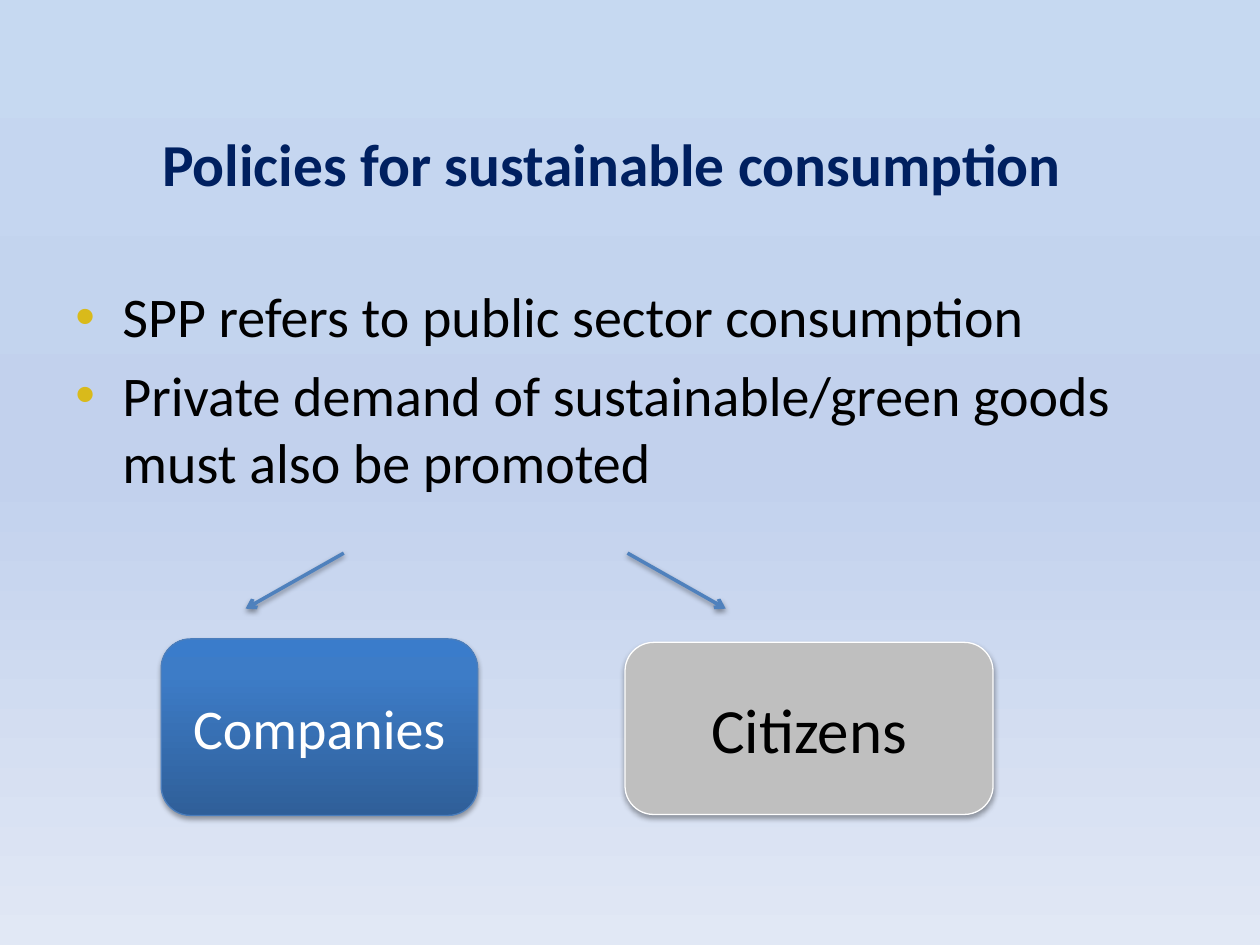
from lxml import etree
from pptx import Presentation
from pptx.dml.color import RGBColor
from pptx.enum.shapes import MSO_CONNECTOR, MSO_SHAPE
from pptx.enum.text import MSO_ANCHOR, PP_ALIGN
from pptx.oxml.ns import qn
from pptx.util import Cm, Pt

ROUNDED = MSO_SHAPE.ROUNDED_RECTANGLE
STRAIGHT = MSO_CONNECTOR.STRAIGHT
CENTER, LEFT = PP_ALIGN.CENTER, PP_ALIGN.LEFT
MIDDLE, TOP = MSO_ANCHOR.MIDDLE, MSO_ANCHOR.TOP

FONT = "Calibri"
COLORS = {
    "title": "002060", "text": "000000", "white": "FFFFFF",
    "bullet": "D9BA1B", "arrow": "4F81BD",
    "companies_line": "4B7EBC", "citizens": "BFBFBF", "shadow": "000000",
}
BACKGROUND_STOPS = [(0, "C6D9F1"), (50, "C2D1ED"), (100, "E1E8F5")]
COMPANIES_STOPS = [(0, "2F5F99"), (80, "3D7CC7"), (100, "3A7CCB")]
BULLETS = [
    "SPP refers to public sector consumption",
    "Private demand of sustainable/green goods must also be promoted",
]


def rgb(name):
    return RGBColor.from_string(COLORS[name])


def add_element(parent, tag, **attributes):
    return etree.SubElement(parent, qn(tag), attributes)


def set_gradient(fill, element, stops, angle):
    """Fill with any number of stops; the angle runs counter-clockwise."""
    fill.gradient()
    fill.gradient_angle = angle
    stop_list = next(element.iter(qn("a:gsLst")))
    for stop in list(stop_list):
        stop_list.remove(stop)
    for position, color in stops:
        stop = add_element(stop_list, "a:gs", pos=str(position * 1000))
        add_element(stop, "a:srgbClr", val=color)


def add_shadow(shape, distance, opacity):
    effects = add_element(shape.element.spPr, "a:effectLst")
    shadow = add_element(effects, "a:outerShdw", blurRad=str(Pt(3.1)),
                         dist=str(Pt(distance)), dir="5400000", rotWithShape="0")
    color = add_element(shadow, "a:srgbClr", val=COLORS["shadow"])
    add_element(color, "a:alpha", val=str(opacity * 1000))


def add_bullet(paragraph, first):
    properties = paragraph._p.get_or_add_pPr()
    properties.set("marL", str(Cm(0.95)))
    properties.set("indent", str(-Cm(0.95)))
    if not first:
        space = add_element(properties, "a:spcBef")
        add_element(space, "a:spcPct", val="20000")
    color = add_element(properties, "a:buClr")
    add_element(color, "a:srgbClr", val=COLORS["bullet"])
    add_element(properties, "a:buFont", typeface="Arial")
    add_element(properties, "a:buChar", char="•")


def write_text(shape, lines, size, color, bold=False, align=CENTER,
               anchor=MIDDLE, bulleted=False):
    frame = shape.text_frame
    frame.word_wrap = True
    frame.vertical_anchor = anchor
    for index, line in enumerate(lines):
        paragraph = frame.add_paragraph() if index else frame.paragraphs[0]
        paragraph.alignment = align
        if bulleted:
            add_bullet(paragraph, first=index == 0)
        run = paragraph.add_run()
        run.text = line
        run.font.name = FONT
        run.font.size = Pt(size)
        run.font.bold = bold
        run.font.color.rgb = rgb(color)


def add_text(slide, lines, left, top, width, height, **text_format):
    box = slide.shapes.add_textbox(Cm(left), Cm(top), Cm(width), Cm(height))
    write_text(box, lines, **text_format)


def add_box(slide, label, left, top, width, height, line, fill=None, stops=None,
            **text_format):
    box = slide.shapes.add_shape(ROUNDED, Cm(left), Cm(top), Cm(width), Cm(height))
    if stops:
        set_gradient(box.fill, box.element, stops, angle=90)
    else:
        box.fill.solid()
        box.fill.fore_color.rgb = rgb(fill)
    box.line.color.rgb = rgb(line)
    box.line.width = Pt(0.75)
    add_shadow(box, distance=1.8, opacity=35)
    write_text(box, [label], **text_format)


def add_arrow(slide, start_x, end_x, start_y=11.15, end_y=12.27):
    arrow = slide.shapes.add_connector(STRAIGHT, Cm(start_x), Cm(start_y),
                                       Cm(end_x), Cm(end_y))
    arrow.line.color.rgb = rgb("arrow")
    arrow.line.width = Pt(2)
    add_element(arrow.line._get_or_add_ln(), "a:tailEnd", type="arrow")
    add_shadow(arrow, distance=1.6, opacity=38)


def main():
    presentation = Presentation()
    presentation.slide_width, presentation.slide_height = Cm(25.4), Cm(19.05)
    slide = presentation.slides.add_slide(presentation.slide_layouts[6])
    set_gradient(slide.background.fill, slide.element, BACKGROUND_STOPS, angle=270)

    # Title and bullets
    add_text(slide, ["Policies for sustainable consumption"],
             1.27, 2.41, 22.12, 1.75, size=34, color="title", bold=True)
    add_text(slide, BULLETS, 1.27, 5.56, 22.86, 12.57, size=32, color="text",
             align=LEFT, anchor=TOP, bulleted=True)

    # The two groups whose demand is promoted
    add_arrow(slide, 6.93, 4.95)
    add_box(slide, "Companies", 3.25, 12.88, 6.38, 3.56, line="companies_line",
            stops=COMPANIES_STOPS, size=32, color="white")
    add_box(slide, "Citizens", 12.6, 12.95, 7.42, 3.47, line="white",
            fill="citizens", size=36, color="text")
    add_arrow(slide, 12.65, 14.63)

    presentation.save("out.pptx")


if __name__ == "__main__":
    main()
